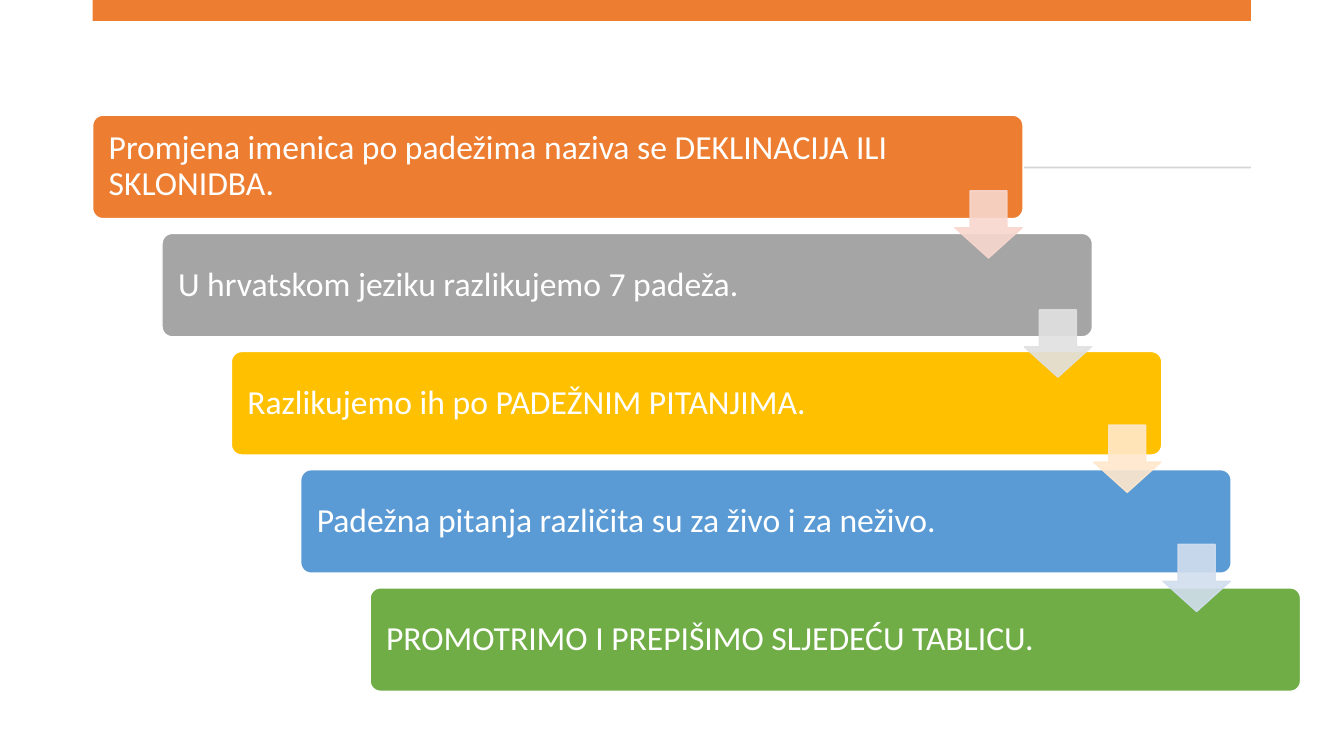
from lxml import etree
from pptx import Presentation
from pptx.dml.color import RGBColor
from pptx.enum.shapes import MSO_SHAPE
from pptx.enum.text import MSO_ANCHOR, PP_ALIGN
from pptx.oxml.ns import qn
from pptx.util import Pt

RECTANGLE = MSO_SHAPE.RECTANGLE
ROUNDED = MSO_SHAPE.ROUNDED_RECTANGLE
DOWN_ARROW = MSO_SHAPE.DOWN_ARROW
MIDDLE = MSO_ANCHOR.MIDDLE
LEFT = PP_ALIGN.LEFT

# Content: text and bar colour of each step
STEPS = [
    ("Promjena imenica po padežima naziva se DEKLINACIJA ILI SKLONIDBA.", "orange"),
    ("U hrvatskom jeziku razlikujemo 7 padeža.", "gray"),
    ("Razlikujemo ih po PADEŽNIM PITANJIMA.", "gold"),
    ("Padežna pitanja različita su za živo i za neživo.", "blue"),
    ("PROMOTRIMO I PREPIŠIMO SLJEDEĆU TABLICU.", "green"),
]
# Arrow colour and its distance below the top of the bar it leaves
ARROWS = [("pale orange", 54), ("pale gray", 54.7),
          ("pale gold", 52.6), ("pale blue", 53.3)]

COLORS = {
    "white": "FFFFFF", "rule": "D5D5D5",
    "orange": "ED7D31", "gray": "A5A5A5", "gold": "FFC000",
    "blue": "5B9BD5", "green": "70AD47",
    "pale orange": "F8D7CE", "pale gray": "E1E1E1",
    "pale gold": "FFE8CC", "pale blue": "D2DEEF",
}

# Layout in points
MARGIN, CONTENT_WIDTH = 66.2, 827.3
BAR_TOP, BAR_WIDTH, BAR_HEIGHT = 82.3, 668.6 - 4, 73.9
STEP_RIGHT, STEP_DOWN = 49.55, 84.4
ARROW_LEFT, ARROW_SIZE = 615.9, 48
TEXT_INSET, ARROW_ROOM = 9.3, 93.6


def add_block(slide, kind, left, top, width, height, fill, line=None):
    shape = slide.shapes.add_shape(kind, Pt(left), Pt(top), Pt(width), Pt(height))
    shape.shadow.inherit = False
    shape.fill.solid()
    shape.fill.fore_color.rgb = RGBColor.from_string(COLORS[fill])
    if line:
        shape.line.color.rgb = RGBColor.from_string(COLORS[line])
        shape.line.width = Pt(1)
    else:
        shape.line.fill.background()
    return shape


def add_bar(slide, left, top, text, color):
    bar = add_block(slide, ROUNDED, left, top, BAR_WIDTH, BAR_HEIGHT, color, "white")
    bar.adjustments[0] = 0.1
    frame = bar.text_frame
    frame.word_wrap = True
    frame.vertical_anchor = MIDDLE
    frame.margin_left = Pt(TEXT_INSET)
    frame.margin_right = Pt(ARROW_ROOM)
    frame.text = text
    paragraph = frame.paragraphs[0]
    paragraph.alignment = LEFT
    paragraph.line_spacing = 0.9
    paragraph.font.name = "Calibri"
    paragraph.font.size = Pt(24)
    paragraph.font.color.rgb = RGBColor.from_string(COLORS["white"])


def add_arrow(slide, left, top, color):
    arrow = add_block(slide, DOWN_ARROW, left, top, ARROW_SIZE, ARROW_SIZE, color, color)
    arrow.adjustments[0] = 0.55
    arrow.adjustments[1] = 0.45
    # Fill and outline are 90 % opaque
    for color_node in arrow.element.spPr.iter(qn("a:srgbClr")):
        etree.SubElement(color_node, qn("a:alpha"), val="90000")


def main():
    presentation = Presentation()
    presentation.slide_width, presentation.slide_height = Pt(960), Pt(540)
    slide = presentation.slides.add_slide(presentation.slide_layouts[6])

    # Top band and thin rule
    add_block(slide, RECTANGLE, MARGIN, 0, CONTENT_WIDTH, 15, "orange")
    add_block(slide, RECTANGLE, MARGIN, 119, CONTENT_WIDTH, 1.3, "rule")

    # Staircase of bars, then the arrows over them
    corners = [(MARGIN + i * STEP_RIGHT, BAR_TOP + i * STEP_DOWN)
               for i in range(len(STEPS))]
    for (left, top), (text, color) in zip(corners, STEPS):
        add_bar(slide, left, top, text, color)
    for (left, top), (color, drop) in zip(corners, ARROWS):
        add_arrow(slide, left + ARROW_LEFT, top + drop, color)

    presentation.save("out.pptx")


if __name__ == "__main__":
    main()
